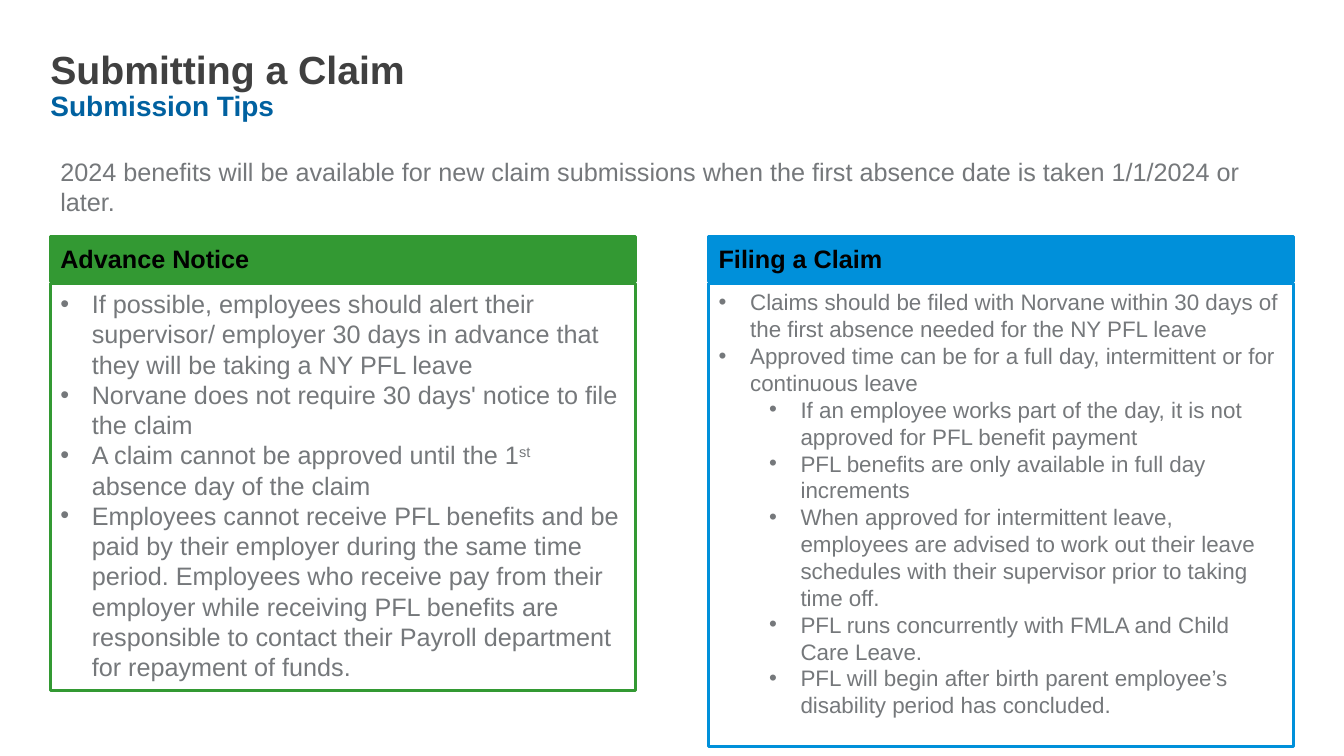
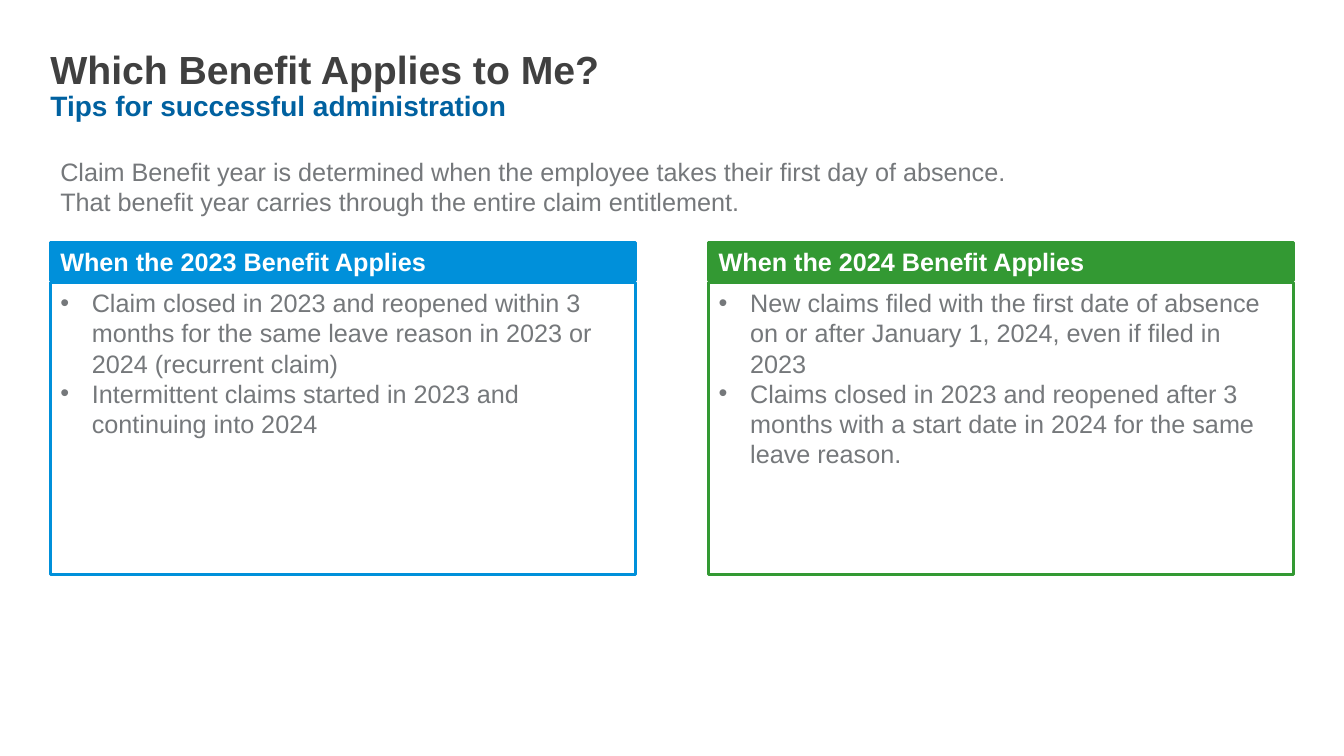
from dataclasses import dataclass

import pptx
import pptx.dml.color
import pptx.enum.shapes
import pptx.enum.text
import pptx.oxml
import pptx.oxml.ns
import pptx.util

RGBColor = pptx.dml.color.RGBColor
Pt = pptx.util.Pt

# Shared style
FONT = "Arial"
DARK = RGBColor(0x40, 0x40, 0x40)
NAVY = RGBColor(0x00, 0x61, 0xA0)
GRAY = RGBColor(0x75, 0x78, 0x7B)
BLUE = RGBColor(0x00, 0x90, 0xDA)
GREEN = RGBColor(0x33, 0x99, 0x33)
BLACK = RGBColor(0x00, 0x00, 0x00)
WHITE = RGBColor(0xFF, 0xFF, 0xFF)

# Layout in px, 96 to the inch
EMU_PER_PX = 9525
SLIDE_WIDTH, SLIDE_HEIGHT = 1280, 720
MARGIN = 48
TITLE_WIDTH, TITLE_HEIGHT = 993, 77
INTRO_TOP, INTRO_HEIGHT = 144, 60
PANEL_WIDTH = 557
PANEL_LEFTS = (MARGIN, SLIDE_WIDTH - MARGIN - PANEL_WIDTH)
HANGING, LEVEL_STEP = 30, 48


@dataclass(frozen=True)
class Bullet:
    text: str  # pieces between carets are superscript
    level: int = 0


@dataclass(frozen=True)
class Panel:
    heading: str
    color: RGBColor
    body_height: int
    bullets: tuple[Bullet, ...]
    text_size: int = 18


@dataclass(frozen=True)
class Page:
    title: str
    subtitle: str
    intro: str
    intro_width: int
    heading_color: RGBColor
    heading_top: int
    heading_height: int
    body_top: int
    panels: tuple[Panel, Panel]


PAGES = (
    Page(
        "Submitting a Claim",
        "Submission Tips",
        "2024 benefits will be available for new claim submissions when the first "
        "absence date is taken 1/1/2024 or later.",
        SLIDE_WIDTH - 2 * MARGIN, BLACK, 225, 43, 270,
        (
            Panel("Advance Notice", GREEN, 388, (
                Bullet("If possible, employees should alert their supervisor/ employer "
                       "30 days in advance that they will be taking a NY PFL leave"),
                Bullet("Norvane does not require 30 days' notice to file the claim"),
                Bullet("A claim cannot be approved until the 1^st^ absence day of the claim"),
                Bullet("Employees cannot receive PFL benefits and be paid by their employer "
                       "during the same time period. Employees who receive pay from their "
                       "employer while receiving PFL benefits are responsible to contact "
                       "their Payroll department for repayment of funds."),
            )),
            Panel("Filing a Claim", BLUE, 441, (
                Bullet("Claims should be filed with Norvane within 30 days of the first "
                       "absence needed for the NY PFL leave"),
                Bullet("Approved time can be for a full day, intermittent or for "
                       "continuous leave"),
                Bullet("If an employee works part of the day, it is not approved for PFL "
                       "benefit payment", 1),
                Bullet("PFL benefits are only available in full day increments", 1),
                Bullet("When approved for intermittent leave, employees are advised to work "
                       "out their leave schedules with their supervisor prior to taking "
                       "time off.", 1),
                Bullet("PFL runs concurrently with FMLA and Child Care Leave.", 1),
                Bullet("PFL will begin after birth parent employee’s disability period has "
                       "concluded.", 1),
            ), text_size=16),
        ),
    ),
    Page(
        "Which Benefit Applies to Me?",
        "Tips for successful administration",
        "Claim Benefit year is determined when the employee takes their first day of "
        "absence.\vThat benefit year carries through the entire claim entitlement.",
        TITLE_WIDTH, WHITE, 231, 36, 269,
        (
            Panel("When the 2023 Benefit Applies", BLUE, 278, (
                Bullet("Claim closed in 2023 and reopened within 3 months for the same leave "
                       "reason in 2023 or 2024 (recurrent claim)"),
                Bullet("Intermittent claims started in 2023 and continuing into 2024"),
            )),
            Panel("When the 2024 Benefit Applies", GREEN, 278, (
                Bullet("New claims filed with the first date of absence on or after "
                       "January 1, 2024, even if filed in 2023"),
                Bullet("Claims closed in 2023 and reopened after 3 months with a start date "
                       "in 2024 for the same leave reason."),
            )),
        ),
    ),
)


def px(length: int) -> pptx.util.Emu:
    return pptx.util.Emu(length * EMU_PER_PX)


def set_font(font, size: int, color: RGBColor, bold: bool = False) -> None:
    font.name = FONT
    font.size = Pt(size)
    font.bold = bold
    font.color.rgb = color


def add_text_frame(slide, left: int, top: int, width: int, height: int):
    text_box = slide.shapes.add_textbox(px(left), px(top), px(width), px(height))
    text_box.text_frame.word_wrap = True
    return text_box.text_frame


def add_title(slide, page: Page) -> None:
    frame = add_text_frame(slide, MARGIN, MARGIN, TITLE_WIDTH, TITLE_HEIGHT)
    frame.margin_left = frame.margin_top = frame.margin_right = frame.margin_bottom = 0
    paragraph = frame.paragraphs[0]
    paragraph.line_spacing = 0.9
    title = paragraph.add_run()
    title.text = page.title
    set_font(title.font, 28, DARK, bold=True)
    paragraph.add_line_break()
    subtitle = paragraph.add_run()
    subtitle.text = page.subtitle
    set_font(subtitle.font, 20, NAVY, bold=True)


def add_intro(slide, page: Page) -> None:
    frame = add_text_frame(slide, MARGIN, INTRO_TOP, page.intro_width, INTRO_HEIGHT)
    paragraph = frame.paragraphs[0]
    paragraph.text = page.intro
    set_font(paragraph.font, 18, GRAY)


def add_box(slide, left: int, top: int, height: int, color: RGBColor):
    shape = slide.shapes.add_shape(
        pptx.enum.shapes.MSO_SHAPE.RECTANGLE,
        px(left), px(top), px(PANEL_WIDTH), px(height))
    shape.shadow.inherit = False
    shape.line.color.rgb = color
    shape.line.width = Pt(2)
    shape.text_frame.word_wrap = True
    return shape


def write_bullet(paragraph, bullet: Bullet, size: int) -> None:
    paragraph.alignment = pptx.enum.text.PP_ALIGN.LEFT
    paragraph.level = bullet.level
    properties = paragraph._p.get_or_add_pPr()
    properties.set("marL", str(px(HANGING + LEVEL_STEP * bullet.level)))
    properties.set("indent", str(px(-HANGING)))
    for tag, name, value in (("a:buFont", "typeface", FONT), ("a:buChar", "char", "•")):
        element = pptx.oxml.parse_xml(f"<{tag} {pptx.oxml.ns.nsdecls('a')}/>")
        element.set(name, value)
        properties.append(element)
    for index, piece in enumerate(bullet.text.split("^")):
        run = paragraph.add_run()
        run.text = piece
        if index % 2:
            run._r.get_or_add_rPr().set("baseline", "30000")
    set_font(paragraph.font, size, GRAY)


def add_panel(slide, page: Page, panel: Panel, left: int) -> None:
    # Outlined body
    body = add_box(slide, left, page.body_top, panel.body_height, panel.color)
    body.fill.background()
    frame = body.text_frame
    frame.vertical_anchor = pptx.enum.text.MSO_ANCHOR.TOP
    for index, bullet in enumerate(panel.bullets):
        paragraph = frame.add_paragraph() if index else frame.paragraphs[0]
        write_bullet(paragraph, bullet, panel.text_size)

    # Filled heading
    heading = add_box(slide, left, page.heading_top, page.heading_height, panel.color)
    heading.fill.solid()
    heading.fill.fore_color.rgb = panel.color
    heading.text_frame.vertical_anchor = pptx.enum.text.MSO_ANCHOR.MIDDLE
    paragraph = heading.text_frame.paragraphs[0]
    paragraph.text = panel.heading
    paragraph.alignment = pptx.enum.text.PP_ALIGN.LEFT
    set_font(paragraph.font, 18, page.heading_color, bold=True)


def main() -> None:
    presentation = pptx.Presentation()
    presentation.slide_width = px(SLIDE_WIDTH)
    presentation.slide_height = px(SLIDE_HEIGHT)
    for page in PAGES:
        slide = presentation.slides.add_slide(presentation.slide_layouts[6])
        add_title(slide, page)
        add_intro(slide, page)
        for panel, left in zip(page.panels, PANEL_LEFTS):
            add_panel(slide, page, panel, left)
    presentation.save("out.pptx")


if __name__ == "__main__":
    main()
